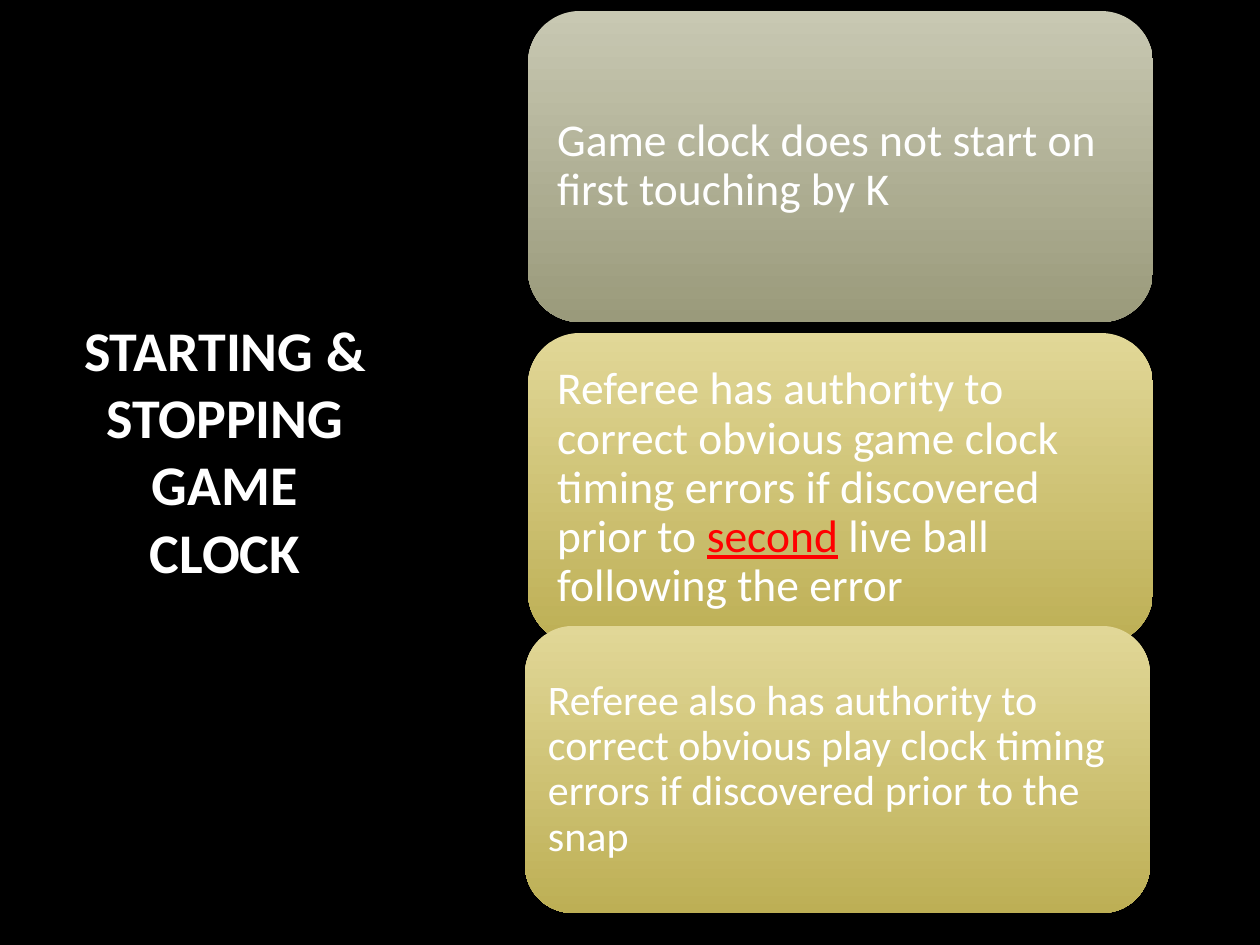
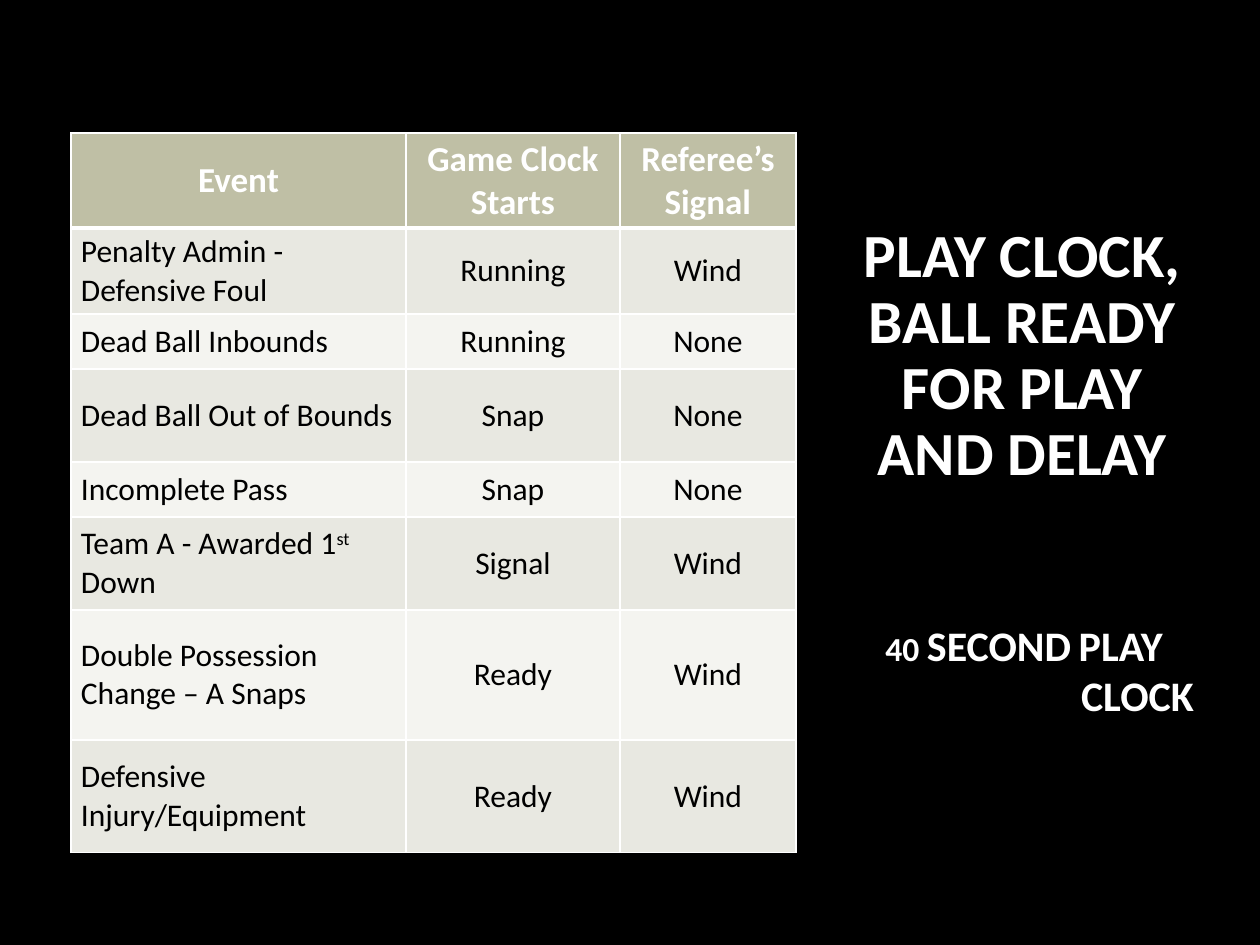
from dataclasses import dataclass

from lxml.etree import SubElement
from pptx import Presentation
from pptx.dml.color import RGBColor
from pptx.enum.shapes import MSO_SHAPE
from pptx.enum.text import MSO_ANCHOR, PP_ALIGN
from pptx.oxml import parse_xml
from pptx.oxml.ns import nsdecls, qn
from pptx.util import Emu, Pt

PIXELS_PER_INCH = 126


@dataclass(frozen=True)
class Theme:
    font: str = "Calibri"
    background: str = "000000"
    light: str = "FFFFFF"
    dark: str = "000000"
    emphasis: str = "FF0000"
    title_fade: tuple = ("FFFFFF", "BFBFBF")
    deep_title_fade: tuple = ("FFFFFF", "A6A6A6")
    olive_fade: tuple = ("C8C8B2", "9A9A7B")
    gold_fade: tuple = ("E1D797", "BDAF55")
    header_fill: str = "BFBFA5"
    row_fills: tuple = ("E8E8E1", "F4F4F0")
    title_size: int = 32
    large_title_size: int = 35
    card_size: int = 26
    small_card_size: int = 24
    subtitle_size: int = 24
    header_size: int = 20
    cell_size: int = 18


THEME = Theme()

EVENTS = [
    ("Penalty Admin - Defensive Foul", "Running", "Wind"),
    ("Dead Ball Inbounds", "Running", "None"),
    ("Dead Ball Out of Bounds", "Snap", "None"),
    ("Incomplete Pass", "Snap", "None"),
    (["Team A - Awarded 1", ("st", {"baseline": "30000"}), " Down"], "Signal", "Wind"),
    ("Double Possession Change – A Snaps", "Ready", "Wind"),
    ("Defensive Injury/Equipment", "Ready", "Wind"),
]
COLUMN_WIDTHS = (335, 214, 176)
ROW_HEIGHTS = (95, 86, 55, 93, 55, 93, 130, 113)


def px(length):
    return Emu(round(length * 914400 / PIXELS_PER_INCH))


def set_values(target, values):
    for name, value in values.items():
        setattr(target, name, value)


def fade(fill, colors):
    """Fill from the first colour at the top to the second at the bottom."""
    fill.gradient()
    fill.gradient_angle = 270
    for stop, color in zip(fill.gradient_stops, colors):
        stop.color.rgb = RGBColor.from_string(color)


def paint(fill, color):
    if isinstance(color, tuple):
        fade(fill, color)
    else:
        fill.solid()
        fill.fore_color.rgb = RGBColor.from_string(color)


def write(paragraph, content, color, font_values, paragraph_values):
    """Write a string or a list of strings and (string, run format) pairs."""
    set_values(paragraph, paragraph_values)
    for part in [content] if isinstance(content, str) else content:
        if part == "\n":
            paragraph.add_line_break()
            continue
        text, changes = (part, {}) if isinstance(part, str) else part
        changes = dict(changes)
        run = paragraph.add_run()
        run.text = text
        paint(run.font.fill, changes.pop("color", color))
        set_values(run.font, {"name": THEME.font, **font_values})
        run.font.underline = changes.pop("underline", None)
        for name, value in changes.items():
            run._r.get_or_add_rPr().set(name, value)


def set_frame(frame, horizontal, vertical):
    set_values(frame, {
        "word_wrap": True, "vertical_anchor": MSO_ANCHOR.MIDDLE,
        "margin_left": px(horizontal), "margin_right": px(horizontal),
        "margin_top": px(vertical), "margin_bottom": px(vertical),
    })


def add_slide(presentation):
    slide = presentation.slides.add_slide(presentation.slide_layouts[6])
    paint(slide.background.fill, THEME.background)
    return slide


def add_heading(slide, box, content, size, colors, margin=13, **paragraph_values):
    heading = slide.shapes.add_textbox(*map(px, box))
    set_frame(heading.text_frame, margin, 6)
    paragraph = heading.text_frame.paragraphs[0]
    write(paragraph, content, colors, {"size": Pt(size), "bold": True},
          {"alignment": PP_ALIGN.CENTER, **paragraph_values})
    return paragraph


def add_text_shadow(paragraph):
    for run in paragraph.runs:
        effects = parse_xml(
            f'<a:effectLst {nsdecls("a")}><a:outerShdw blurRad="50800" dist="38100" '
            'dir="5400000"><a:srgbClr val="000000"><a:alpha val="40000"/></a:srgbClr>'
            '</a:outerShdw></a:effectLst>')
        run._r.get_or_add_rPr().find(qn("a:gradFill")).addnext(effects)


def indent_hanging(paragraph, length):
    properties = paragraph._p.get_or_add_pPr()
    properties.set("marL", str(px(length)))
    properties.set("indent", str(-px(length)))


def add_card(slide, box, content, colors, size, margin):
    card = slide.shapes.add_shape(MSO_SHAPE.ROUNDED_RECTANGLE, *map(px, box))
    card.shadow.inherit = False
    card.line.fill.background()
    fade(card.fill, colors)
    set_frame(card.text_frame, margin, margin)
    write(card.text_frame.paragraphs[0], content, THEME.light, {"size": Pt(size)},
          {"alignment": PP_ALIGN.LEFT, "line_spacing": 0.9})


def set_borders(cell, bottom_width):
    properties = cell._tc.get_or_add_tcPr()
    widths = {"a:lnL": 1, "a:lnR": 1, "a:lnT": 1, "a:lnB": bottom_width}
    for tag, width in widths.items():
        line = SubElement(properties, qn(tag), w=str(Pt(width)))
        SubElement(SubElement(line, qn("a:solidFill")), qn("a:srgbClr"), val=THEME.light)


def fill_cell(cell, content, is_header, is_centred, fill):
    set_values(cell, {
        "vertical_anchor": MSO_ANCHOR.MIDDLE,
        "margin_left": px(10), "margin_right": px(10),
        "margin_top": px(5), "margin_bottom": px(5),
    })
    set_borders(cell, 3 if is_header else 1)
    paint(cell.fill, fill)
    size = THEME.header_size if is_header else THEME.cell_size
    write(cell.text_frame.paragraphs[0], content,
          THEME.light if is_header else THEME.dark,
          {"size": Pt(size), "bold": is_header},
          {"alignment": PP_ALIGN.CENTER if is_centred else PP_ALIGN.LEFT})


def add_event_table(slide, left, top):
    rows = [("Event", "Game Clock Starts", "Referee’s Signal"), *EVENTS]
    table = slide.shapes.add_table(
        len(rows), len(COLUMN_WIDTHS), px(left), px(top),
        px(sum(COLUMN_WIDTHS)), px(sum(ROW_HEIGHTS))).table
    for column, width in zip(table.columns, COLUMN_WIDTHS):
        column.width = px(width)
    for row, height in zip(table.rows, ROW_HEIGHTS):
        row.height = px(height)
    for row_index, row in enumerate(rows):
        is_header = row_index == 0
        fill = THEME.header_fill if is_header else THEME.row_fills[(row_index - 1) % 2]
        for column_index, content in enumerate(row):
            fill_cell(table.cell(row_index, column_index), content, is_header,
                      is_header or column_index > 0, fill)


def add_game_clock_slide(presentation):
    slide = add_slide(presentation)
    add_heading(slide, (69, 197, 312, 506),
                ["STARTING &", "\n", "STOPPING GAME CLOCK"],
                THEME.title_size, THEME.title_fade)
    add_card(slide, (528, 11, 625, 311),
             "Game clock does not start on first touching by K",
             THEME.olive_fade, THEME.card_size, 14)
    add_card(slide, (528, 333, 625, 311),
             ["Referee has authority to correct obvious game clock timing errors "
              "if discovered prior to ",
              ("second", {"color": THEME.emphasis, "underline": True}),
              " live ball following the error"],
             THEME.gold_fade, THEME.card_size, 14)
    add_card(slide, (525, 626, 625, 287),
             "Referee also has authority to correct obvious play clock timing "
             "errors if discovered prior to the snap",
             THEME.gold_fade, THEME.small_card_size, 9)


def add_play_clock_slide(presentation):
    slide = add_slide(presentation)
    title = add_heading(slide, (848, 106, 348, 501),
                        "PLAY CLOCK, BALL READY FOR PLAY AND DELAY",
                        THEME.large_title_size, THEME.deep_title_fade,
                        margin=8, line_spacing=0.9)
    add_text_shadow(title)
    subtitle = add_heading(slide, (850, 588, 348, 163),
                           [("40 SECOND PLAY CLOCK", {"cap": "small"})],
                           THEME.subtitle_size, THEME.title_fade,
                           space_before=Pt(5), space_after=Pt(6))
    indent_hanging(subtitle, 114)
    add_event_table(slide, 71, 133)


def main():
    presentation = Presentation()
    set_values(presentation, {"slide_width": px(1260), "slide_height": px(945)})
    add_game_clock_slide(presentation)
    add_play_clock_slide(presentation)
    presentation.save("out.pptx")


if __name__ == "__main__":
    main()
